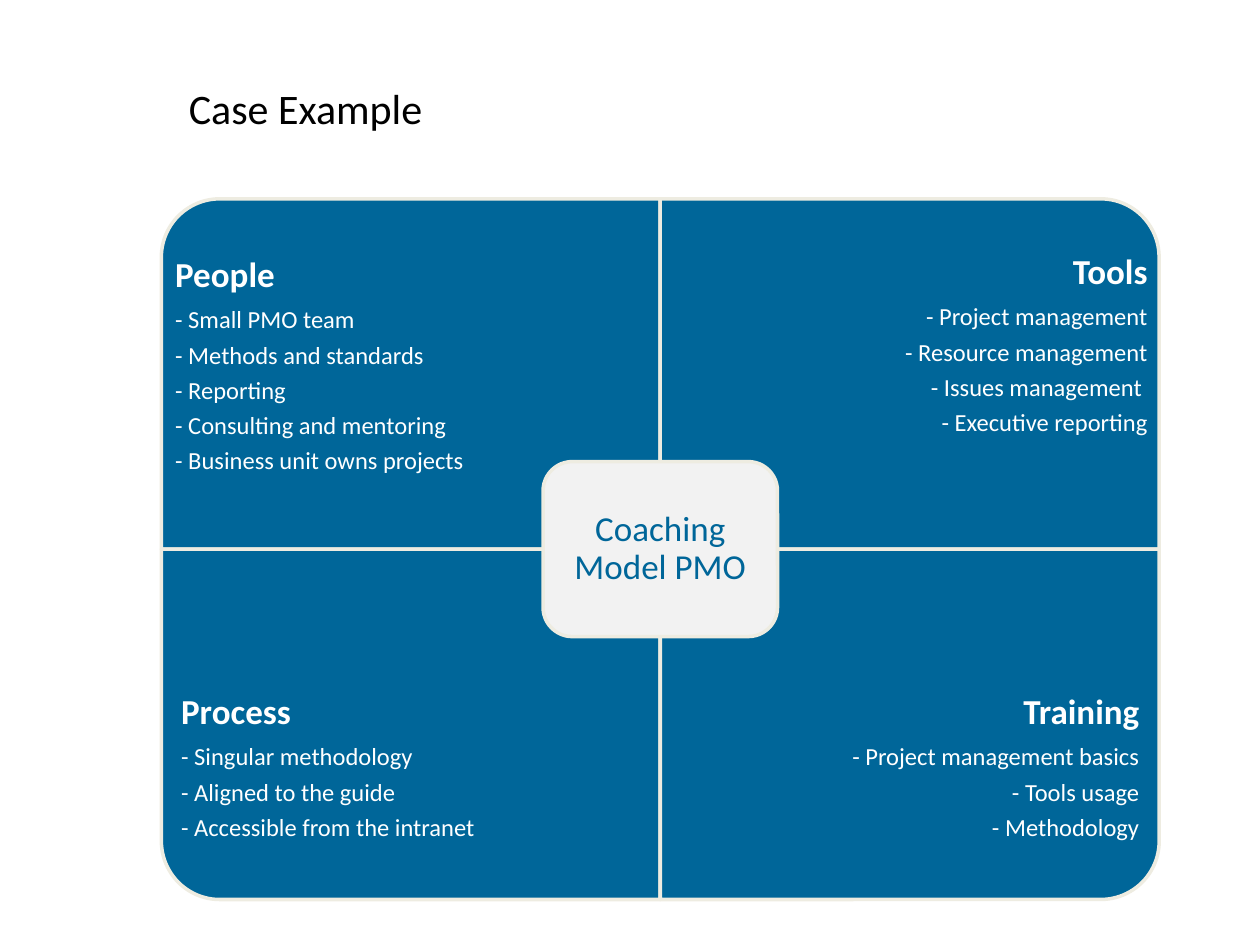
import pptx
import pptx.util
import pptx.dml.color
import pptx.enum.shapes
import pptx.enum.text

Pt = pptx.util.Pt
RGBColor = pptx.dml.color.RGBColor
MSO_SHAPE = pptx.enum.shapes.MSO_SHAPE
PP_ALIGN = pptx.enum.text.PP_ALIGN
MSO_ANCHOR = pptx.enum.text.MSO_ANCHOR

BLUE = RGBColor(0x00, 0x66, 0x99)
CREAM = RGBColor(0xEE, 0xEC, 0xE1)
LIGHT = RGBColor(0xF2, 0xF2, 0xF2)
WHITE = RGBColor(0xFF, 0xFF, 0xFF)
BLACK = RGBColor(0x00, 0x00, 0x00)
FONT = "Calibri"

# Heading, bullets, rotation, text offset from the quadrant top, side margin
QUADRANTS = [
    ("People", ["Small PMO team", "Methods and standards", "Reporting",
                "Consulting and mentoring", "Business unit owns projects"],
     270, 33.7, 7.9),
    ("Tools", ["Project management", "Resource management",
               "Issues management ", "Executive reporting"],
     0, 32, 6.6),
    ("Process", ["Singular methodology", "Aligned to the guide",
                 "Accessible from the intranet"],
     180, 83.2, 11.3),
    ("Training", ["Project management basics", "Tools usage", "Methodology"],
     90, 83.2, 11.3),
]


def set_font(p, size, color, bold=False):
    p.font.name = FONT
    p.font.size = Pt(size)
    p.font.color.rgb = color
    p.font.bold = bold


def add_panel(slide, kind, x, y, w, h, fill):
    sp = slide.shapes.add_shape(kind, Pt(x), Pt(y), Pt(w), Pt(h))
    sp.shadow.inherit = False
    sp.fill.solid()
    sp.fill.fore_color.rgb = fill
    sp.line.color.rgb = CREAM
    sp.line.width = Pt(2)
    return sp


def add_text_box(slide, x, y, w, h, margin_x, margin_y):
    tf = slide.shapes.add_textbox(Pt(x), Pt(y), Pt(w), Pt(h)).text_frame
    tf.word_wrap = True
    tf.margin_left = tf.margin_right = Pt(margin_x)
    tf.margin_top = tf.margin_bottom = Pt(margin_y)
    return tf


def add_title(slide, x, y, w, h):
    tf = add_text_box(slide, x, y, w, h, 7.2, 3.6)
    tf.vertical_anchor = MSO_ANCHOR.MIDDLE
    p = tf.paragraphs[0]
    p.text = "Case Example"
    set_font(p, 24, BLACK)


def add_quadrant(slide, x, y, w, h, align, heading, bullets, rotation, offset, margin):
    # Panel: a quarter turn swaps its sides about the same centre
    pw, ph = (h, w) if rotation % 180 else (w, h)
    sp = add_panel(slide, MSO_SHAPE.ROUND_1_RECTANGLE,
                   x + (w - pw) / 2, y + (h - ph) / 2, pw, ph, BLUE)
    sp.rotation = rotation

    # Heading and bullets
    tf = add_text_box(slide, x, y + offset, w, h - offset, margin, 0)
    for i, text in enumerate([heading] + [f"- {b}" for b in bullets]):
        p = tf.paragraphs[0] if i == 0 else tf.add_paragraph()
        p.text = text
        p.alignment = align
        p.line_spacing = 0.9
        p.space_after = Pt(4.9 if i else 7)
        set_font(p, 14 if i else 20, WHITE, bold=i == 0)


def add_matrix(slide, x, y, w, h):
    # Four quadrants, row by row
    qw, qh = w / 2, h / 2
    for i, quadrant in enumerate(QUADRANTS):
        row, col = divmod(i, 2)
        align = PP_ALIGN.RIGHT if col else PP_ALIGN.LEFT
        add_quadrant(slide, x + col * qw, y + row * qh, qw, qh, align, *quadrant)

    # Centre label
    cw, ch = 134, 100
    sp = add_panel(slide, MSO_SHAPE.ROUNDED_RECTANGLE,
                   x + (w - cw) / 2, y + (h - ch) / 2, cw, ch, LIGHT)
    tf = sp.text_frame
    tf.word_wrap = True
    tf.vertical_anchor = MSO_ANCHOR.MIDDLE
    tf.margin_left = tf.margin_right = tf.margin_top = tf.margin_bottom = Pt(6)
    p = tf.paragraphs[0]
    p.text = "Coaching Model PMO"
    p.alignment = PP_ALIGN.CENTER
    p.line_spacing = 0.9
    set_font(p, 20, BLUE)


def main():
    prs = pptx.Presentation()
    prs.slide_width, prs.slide_height = Pt(720), Pt(540)
    slide = prs.slides.add_slide(prs.slide_layouts[6])
    add_matrix(slide, 92.2, 113.6, 570.2, 400.4)
    add_title(slide, 100.8, 29.2, 594.7, 64.8)
    prs.save("out.pptx")


if __name__ == "__main__":
    main()
